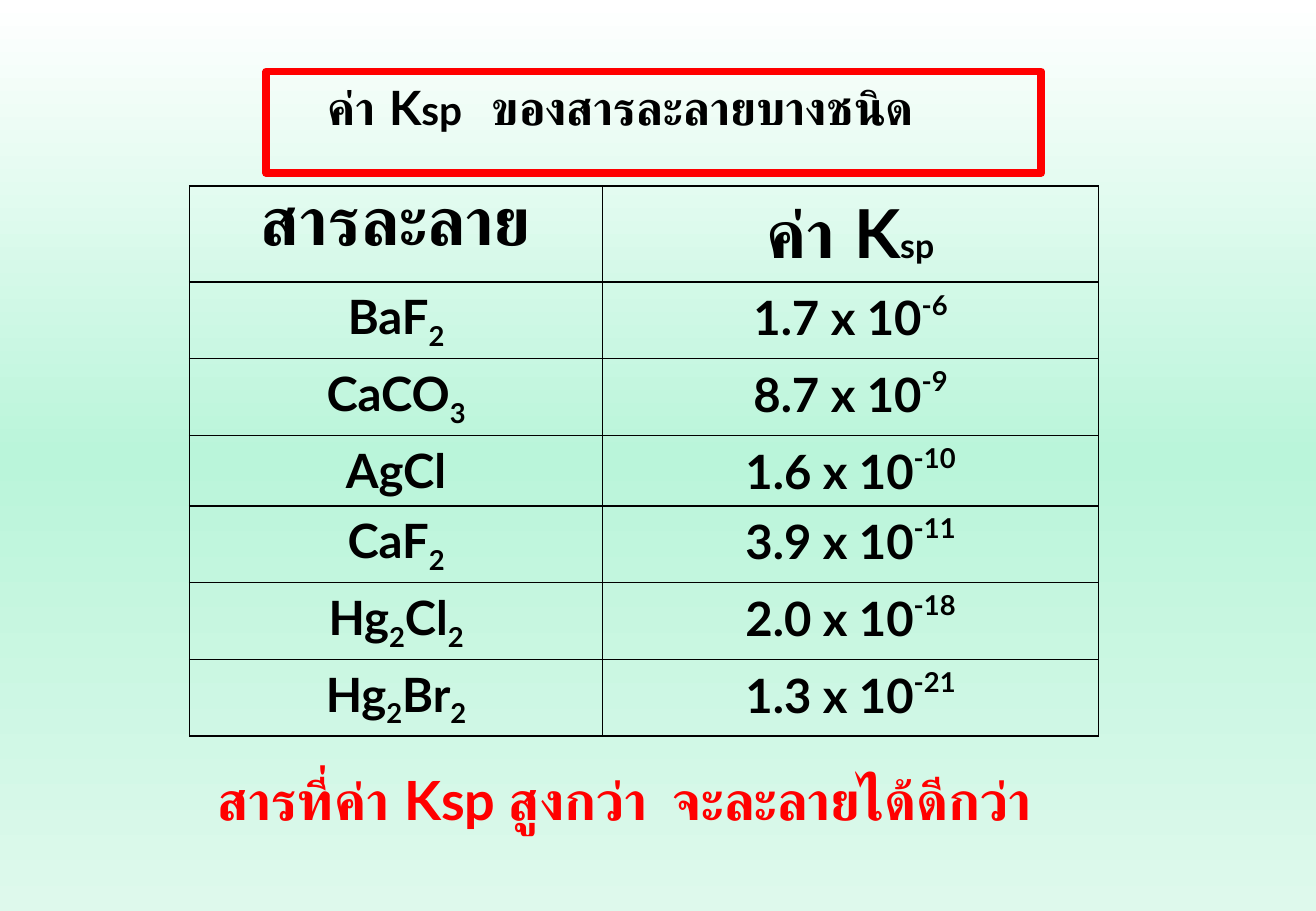
from copy import deepcopy
from itertools import groupby

from lxml.etree import SubElement as Sub
from pptx import Presentation
from pptx.dml.color import RGBColor as Rgb
from pptx.enum.text import MSO_ANCHOR as Anchor, MSO_AUTO_SIZE as Fit, PP_ALIGN as Align
from pptx.oxml.ns import qn
from pptx.util import Emu, Inches, Pt

HUES = {"ink": "000000", "red": "FF0000", "top": "FFFFFF", "mid": "BAF5DA", "low": "DEF9EC"}
FONT = "Lato"
SALTS = [
    ("BaF2", "1.7", "-6"),
    ("CaCO3", "8.7", "-9"),
    ("AgCl", "1.6", "-10"),
    ("CaF2", "3.9", "-11"),
    ("Hg2Cl2", "2.0", "-18"),
    ("Hg2Br2", "1.3", "-21"),
]


def hue(name):
    return Rgb.from_string(HUES[name])


def write(par, text, size=28, color="ink", shift=0, space=0):
    """Add a bold run; shift is the baseline in percent, space the tracking in points."""
    par.alignment = Align.CENTER
    run = par.add_run()
    run.text = text
    font = run.font
    font.name, font.size, font.bold = FONT, Pt(size), True
    font.color.rgb = hue(color)
    props = run._r.get_or_add_rPr()
    if shift:
        props.set("baseline", str(shift * 1000))
    if space:
        props.set("spc", str(round(space * 100)))


def share(deck, x, y, w, h):
    """Turn percentages of the slide into a box."""
    wide, high = deck.slide_width / 100, deck.slide_height / 100
    return Emu(int(x * wide)), Emu(int(y * high)), Emu(int(w * wide)), Emu(int(h * high))


def paint(slide):
    fill = slide.background.fill
    fill.gradient()
    fill.gradient_angle = 270
    stops = slide._element.find(".//" + qn("a:gsLst"))
    stops.append(deepcopy(stops[0]))
    for stop, place, name in zip(fill.gradient_stops, (0, 0.5, 1), ("top", "mid", "low")):
        stop.position = place
        stop.color.rgb = hue(name)


def head(slide, box):
    title = slide.shapes.title
    title.left, title.top, title.width, title.height = box
    title.line.color.rgb = hue("red")
    title.line.width = Pt(4.5)
    frame = title.text_frame
    frame.word_wrap, frame.auto_size = True, Fit.SHAPE_TO_FIT_TEXT
    frame.vertical_anchor = Anchor.TOP
    frame.margin_right = Inches(0.64)
    par = frame.paragraphs[0]
    par.space_before = Pt(0)
    write(par, "ค่า K")
    write(par, "sp", size=24)
    write(par, " ", space=10.8)
    write(par, "ของสารละลายบางชนิด")


def border(cell):
    props = cell._tc.get_or_add_tcPr()
    for side in ("lnL", "lnR", "lnT", "lnB"):
        line = Sub(props, qn("a:" + side), w=str(Pt(1)))
        solid = Sub(line, qn("a:solidFill"))
        Sub(solid, qn("a:srgbClr"), val=HUES["ink"])


def grid(slide, box):
    left, top, wide, high = box
    table = slide.shapes.add_table(len(SALTS) + 1, 2, *box).table
    table.first_row = table.horz_banding = False
    for col, part in zip(table.columns, (5, 6)):
        col.width = int(wide * part / 11)
    first = int(high * 0.185)
    for num, row in enumerate(table.rows):
        row.height = (high - first) // len(SALTS) if num else first
    for cell in table.iter_cells():
        border(cell)
        cell.fill.background()

    def par(row, col):
        return table.cell(row, col).text_frame.paragraphs[0]

    # Header row
    write(par(0, 0), "สารละลาย", size=40)
    write(par(0, 1), "ค่า K", size=40)
    write(par(0, 1), "sp", size=20)
    # Formulas with lowered digits, values with raised exponents
    for row, (salt, base, power) in enumerate(SALTS, 1):
        for digit, chars in groupby(salt, str.isdigit):
            write(par(row, 0), "".join(chars), shift=-25 if digit else 0)
        write(par(row, 1), f"{base} x 10")
        write(par(row, 1), power, shift=44)


def note(slide, box):
    frame = slide.shapes.add_textbox(*box).text_frame
    frame.word_wrap, frame.auto_size = True, Fit.SHAPE_TO_FIT_TEXT
    par = frame.paragraphs[0]
    write(par, "สารที่ค่า Ksp สูงกว่า", size=32, color="red")
    write(par, " ", size=32, color="red", space=6.2)
    write(par, "จะละลายได้ดีกว่า", size=32, color="red")


def main():
    deck = Presentation()
    deck.slide_width, deck.slide_height = Inches(10.83), Inches(7.5)
    slide = deck.slides.add_slide(deck.slide_layouts[5])
    paint(slide)
    head(slide, share(deck, 20.22, 7.87, 58.91, 7.6))
    grid(slide, share(deck, 14.4, 20.4, 69.07, 57.07))
    note(slide, share(deck, 7.85, 83.47, 79.22, 8.53))
    deck.save("out.pptx")


if __name__ == "__main__":
    main()
